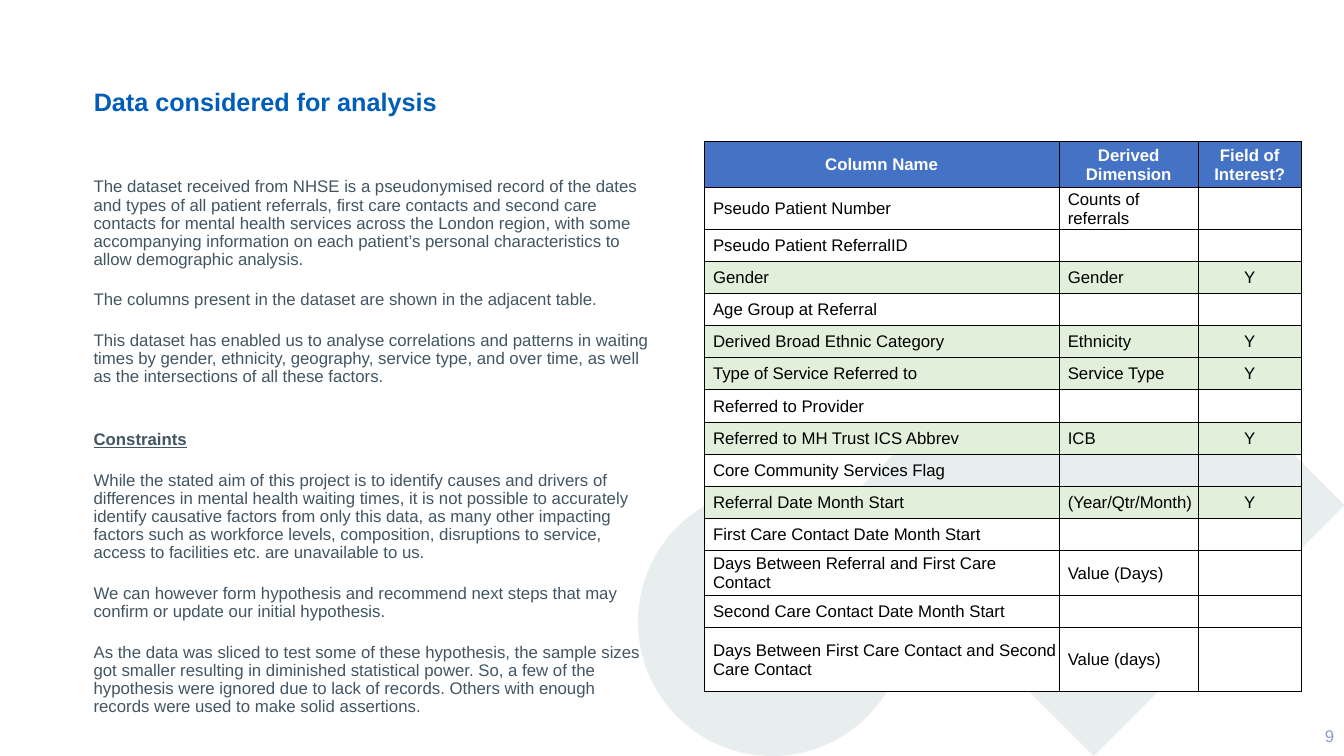
"""Build a slide on the data considered for a waiting times analysis."""
import dataclasses

import pptx
import pptx.dml.color
import pptx.enum.shapes
import pptx.enum.text
import pptx.oxml
import pptx.oxml.ns
import pptx.util

Cm = pptx.util.Cm
Pt = pptx.util.Pt
Align = pptx.enum.text.PP_ALIGN
Anchor = pptx.enum.text.MSO_ANCHOR
Preset = pptx.enum.shapes.MSO_SHAPE


@dataclasses.dataclass(frozen=True)
class Theme:
    font: str = "Arial"
    title_size: float = 18
    text_size: float = 12
    title: str = "005EB8"
    body: str = "425563"
    number: str = "8C9DCD"
    decoration: str = "E8EDEE"
    header: str = "4472C4"
    interest: str = "E2F0DB"
    plain: str = "FFFFFF"
    ink: str = "000000"
    border_width: float = 0.5


def rgb(color):
    return pptx.dml.color.RGBColor.from_string(color)


def write(para, text, *, font, size, color, bold=False, underline=False,
          align=Align.LEFT, line_spacing=None, before=0, after=0, indent=0):
    para.alignment = align
    para.line_spacing = line_spacing
    para.space_before, para.space_after = Pt(before), Pt(after)
    if indent:
        para._p.get_or_add_pPr().set("marL", str(Cm(indent)))
    target = para
    if text:
        target = para.add_run()
        target.text = text
    target.font.name, target.font.size = font, Pt(size)
    target.font.bold, target.font.underline = bold, underline
    target.font.color.rgb = rgb(color)


class SlideBuilder:
    def __init__(self, page, theme):
        self.page = page
        self.theme = theme

    def title(self, text, left, top, width, height):
        box = self.page.shapes.title
        box.left, box.top, box.width, box.height = map(Cm, (left, top, width, height))
        frame = box.text_frame
        frame.auto_size = pptx.enum.text.MSO_AUTO_SIZE.NONE
        frame.word_wrap = True
        frame.vertical_anchor = Anchor.TOP
        write(frame.paragraphs[0], text, font=self.theme.font, size=self.theme.title_size,
              color=self.theme.title, bold=True, line_spacing=0.9)

    def decoration(self, preset, left, top, size, rotation=0):
        shape = self.page.shapes.add_shape(preset, Cm(left), Cm(top), Cm(size), Cm(size))
        shape.rotation = rotation
        shape.shadow.inherit = False
        shape.fill.solid()
        shape.fill.fore_color.rgb = rgb(self.theme.decoration)
        shape.line.fill.background()

    def text_box(self, left, top, width, height, anchor=Anchor.TOP):
        box = self.page.shapes.add_textbox(Cm(left), Cm(top), Cm(width), Cm(height))
        box.text_frame.word_wrap = True
        box.text_frame.vertical_anchor = anchor
        return box.text_frame

    def body(self, texts, left, top, width, height, heading=False):
        frame = self.text_box(left, top, width, height)
        for index, text in enumerate(texts):
            is_heading = heading and index == 0
            para = frame.add_paragraph() if index else frame.paragraphs[0]
            write(para, text, font=self.theme.font, size=self.theme.text_size,
                  color=self.theme.body, bold=is_heading, underline=is_heading,
                  line_spacing=0.9, before=10 if index else 0, after=6)

    def page_number(self, text, left, top, width, height):
        frame = self.text_box(left, top, width, height, Anchor.MIDDLE)
        write(frame.paragraphs[0], text, font=self.theme.font, size=self.theme.text_size,
              color=self.theme.number, align=Align.RIGHT)

    def cell(self, cell, text, fill, color, bold, centred):
        cell.margin_left = cell.margin_right = cell.margin_top = Cm(0.02)
        cell.margin_bottom = 0
        cell.vertical_anchor = Anchor.MIDDLE
        write(cell.text_frame.paragraphs[0], text, font=self.theme.font,
              size=self.theme.text_size, color=color, bold=bold,
              align=Align.CENTER if centred else Align.LEFT,
              indent=0 if centred else 0.2)
        properties = cell._tc.get_or_add_tcPr()
        for side in ("lnL", "lnR", "lnT", "lnB"):
            properties.append(pptx.oxml.parse_xml(
                f'<a:{side} {pptx.oxml.ns.nsdecls("a")} w="{Pt(self.theme.border_width)}">'
                f'<a:solidFill><a:srgbClr val="{self.theme.ink}"/></a:solidFill></a:{side}>'))
        if fill is None:
            cell.fill.background()
        else:
            cell.fill.solid()
            cell.fill.fore_color.rgb = rgb(fill)

    def table(self, rows, clear_row, left, top, widths, heights):
        grid = self.page.shapes.add_table(
            len(rows), len(widths), Cm(left), Cm(top),
            Cm(sum(widths)), Cm(sum(heights))).table
        grid.horz_banding = False
        for column, width in zip(grid.columns, widths):
            column.width = Cm(width)
        for index, (row, height, texts) in enumerate(zip(grid.rows, heights, rows)):
            row.height = Cm(height)
            header = index == 0
            if header:
                fill = self.theme.header
            elif texts[0] == clear_row:
                fill = None
            else:
                fill = self.theme.interest if texts[2] else self.theme.plain
            for position, text in enumerate(texts):
                self.cell(row.cells[position], text, fill,
                          self.theme.plain if header else self.theme.ink,
                          header, header or position == 2)


INTRODUCTION = [
    "The dataset received from NHSE is a pseudonymised record of the dates and types of all patient referrals, first care contacts and second care contacts for mental health services across the London region, with some accompanying information on each patient’s personal characteristics to allow demographic analysis.",
    "The columns present in the dataset are shown in the adjacent table.",
    "This dataset has enabled us to analyse correlations and patterns in waiting times by gender, ethnicity, geography, service type, and over time, as well as the intersections of all these factors.",
]
CONSTRAINTS = [
    "Constraints",
    "While the stated aim of this project is to identify causes and drivers of differences in mental health waiting times, it is not possible to accurately identify causative factors from only this data, as many other impacting factors such as workforce levels, composition, disruptions to service, access to facilities etc. are unavailable to us.",
    "We can however form hypothesis and recommend next steps that may confirm or update our initial hypothesis.",
    "As the data was sliced to test some of these hypothesis, the sample sizes got smaller resulting in diminished statistical power. So, a few of the hypothesis were ignored due to lack of records. Others with enough records were used to make solid assertions.",
]
CLEAR_ROW = "Core Community Services Flag"
COLUMNS = [
    ("Column Name", "Derived Dimension", "Field of Interest?"),
    ("Pseudo Patient Number", "Counts of referrals", ""),
    ("Pseudo Patient ReferralID", "", ""),
    ("Gender", "Gender", "Y"),
    ("Age Group at Referral", "", ""),
    ("Derived Broad Ethnic Category", "Ethnicity", "Y"),
    ("Type of Service Referred to", "Service Type", "Y"),
    ("Referred to Provider", "", ""),
    ("Referred to MH Trust ICS Abbrev", "ICB", "Y"),
    (CLEAR_ROW, "", ""),
    ("Referral Date Month Start", "(Year/Qtr/Month)", "Y"),
    ("First Care Contact Date Month Start", "", ""),
    ("Days Between Referral and First Care Contact", "Value (Days)", ""),
    ("Second Care Contact Date Month Start", "", ""),
    ("Days Between First Care Contact and Second Care Contact", "Value (days)", ""),
]
ROW_HEIGHTS = [1.17, 1.04] + [0.81] * 10 + [1.14, 0.81, 1.6]


def main():
    deck = pptx.Presentation()
    deck.slide_width, deck.slide_height = Cm(33.87), Cm(19.05)
    builder = SlideBuilder(deck.slides.add_slide(deck.slide_layouts[5]), Theme())
    builder.decoration(Preset.OVAL, 16.08, 12.29, 6.76)
    builder.decoration(Preset.RECTANGLE, 23.09, 8.26, 8.94, rotation=45)
    builder.page_number("9", 31.4, 18.02, 2.47, 1.02)
    builder.title("Data considered for analysis", 2.11, 2.13, 13.34, 2.03)
    builder.body(INTRODUCTION, 2.11, 4.37, 14.55, 5.51)
    builder.table(COLUMNS, CLEAR_ROW, 17.75, 3.56, [8.94, 3.51, 2.59], ROW_HEIGHTS)
    builder.body(CONSTRAINTS, 2.11, 10.74, 14.55, 7.06, heading=True)
    deck.save("out.pptx")


if __name__ == "__main__":
    main()
